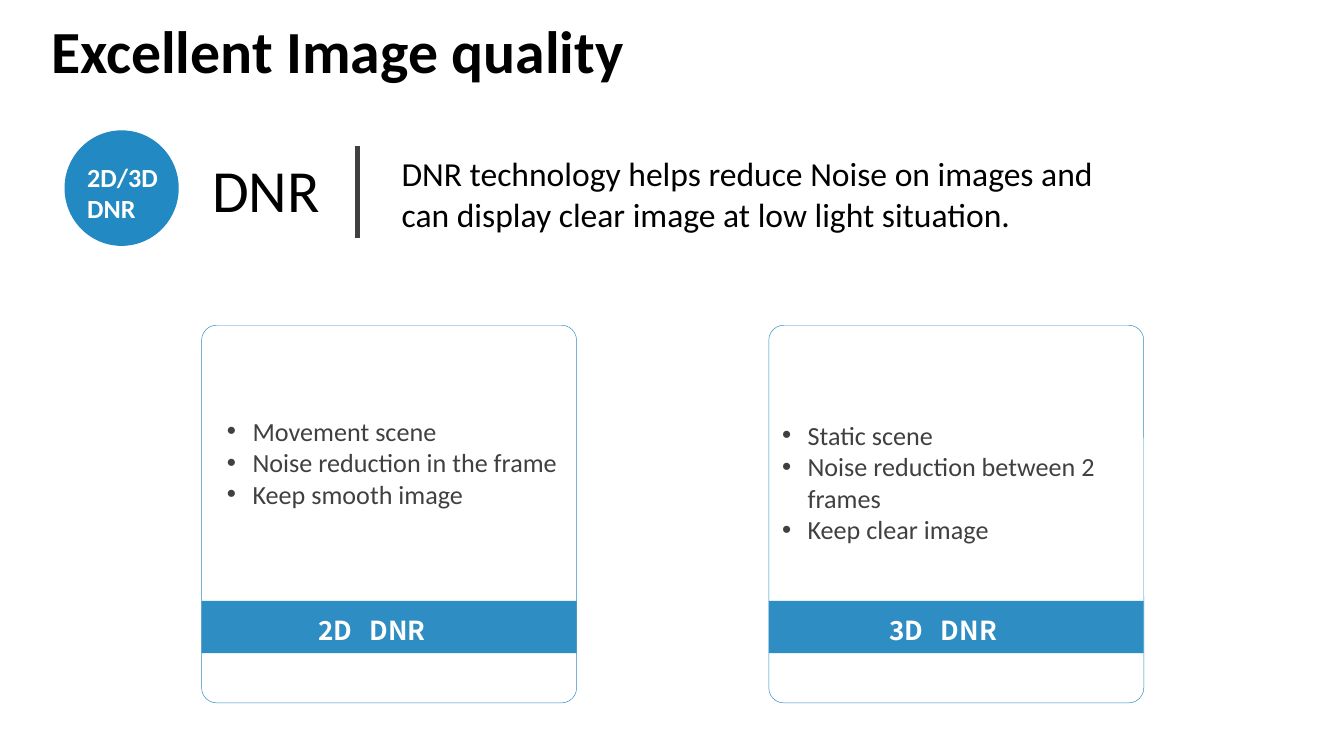
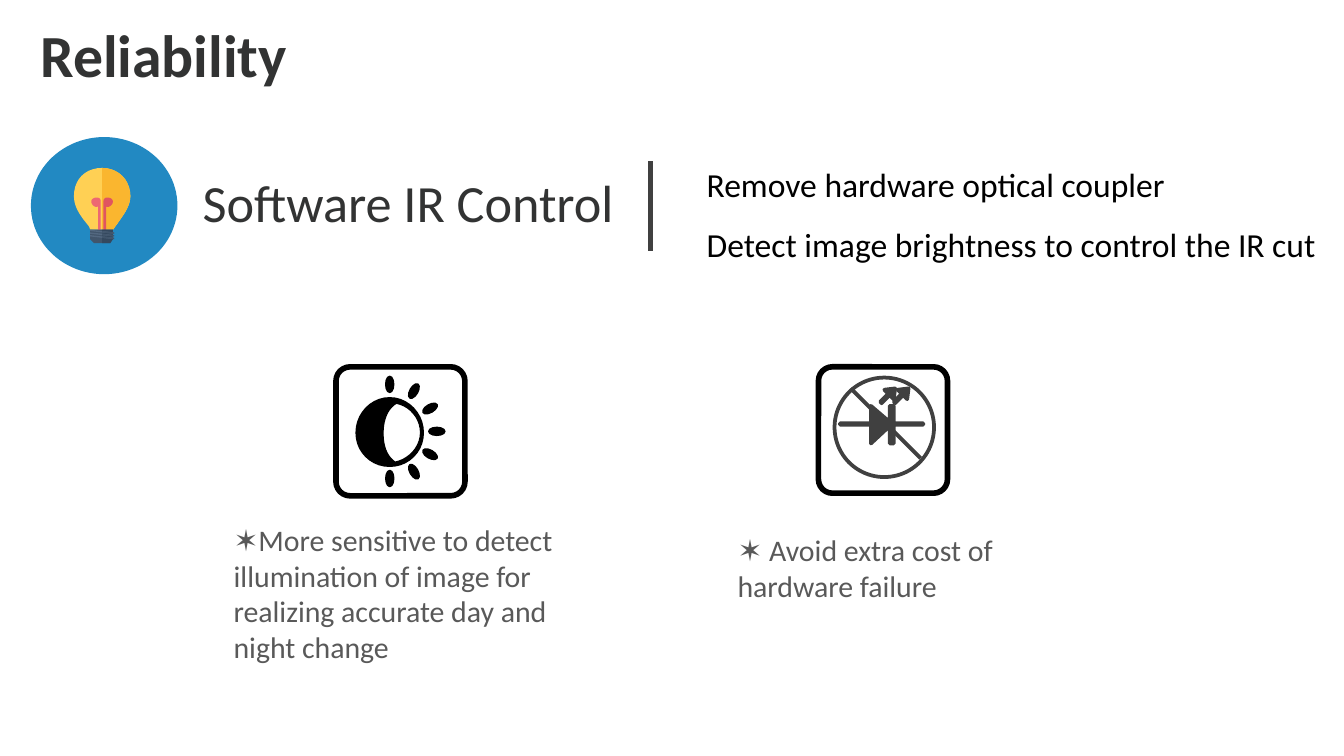
"""Build two slides on image quality and reliability."""
import math
from dataclasses import dataclass

from lxml import etree
from pptx import Presentation, slide as s, util as u
from pptx.dml.color import RGBColor
from pptx.enum import shapes, text as t
from pptx.oxml import ns
from pptx.shapes import autoshape as a
from pptx.text import text as tx

SCALE = 9144
BLACK = RGBColor(0x00, 0x00, 0x00)
WHITE = RGBColor(0xFF, 0xFF, 0xFF)
CHARCOAL = RGBColor(0x32, 0x33, 0x33)
DARK_GREY = RGBColor(0x40, 0x40, 0x40)
GREY = RGBColor(0x59, 0x59, 0x59)
BADGE_BLUE = RGBColor(0x22, 0x89, 0xC2)
CARD_BLUE = RGBColor(0x2E, 0x8D, 0xC2)
GLASS = RGBColor(0xFF, 0xD0, 0x54)
GLASS_SHADE = RGBColor(0xFA, 0xB6, 0x2F)
FILAMENT = RGBColor(0xED, 0x68, 0x72)
FILAMENT_SHADE = RGBColor(0xE0, 0x55, 0x60)
CAP = RGBColor(0x41, 0x55, 0x6B)
CAP_SHADE = RGBColor(0x34, 0x48, 0x5E)
THREAD = RGBColor(0x53, 0x68, 0x80)
MAIN_FONT = "Calibri"
LABEL_FONT = "Noto Sans CJK SC"

Contour = list[tuple[float, ...]]


@dataclass(frozen=True)
class Box:
    left: int
    top: int
    width: int
    height: int

    def emu(self) -> tuple[u.Emu, ...]:
        return tuple(px(n) for n in (self.left, self.top, self.width, self.height))


@dataclass(frozen=True)
class Style:
    size: int
    color: RGBColor
    bold: bool = False
    font: str = MAIN_FONT


@dataclass(frozen=True)
class TextItem:
    box: Box
    lines: tuple[str, ...]
    style: Style
    spacing: float = 1.0


@dataclass(frozen=True)
class Card:
    left: int
    label: str
    label_box: Box
    list_box: Box
    points: tuple[str, ...]
    alignment: t.PP_ALIGN


CARDS = (
    Card(150, "2D DNR", Box(227, 452, 125, 26), Box(159, 304, 271, 77),
         ("Movement scene", "Noise reduction in the frame", "Keep smooth image"),
         t.PP_ALIGN.JUSTIFY),
    Card(572, "3D DNR", Box(652, 452, 108, 32), Box(572, 307, 272, 105),
         ("Static scene", "Noise reduction between 2 frames", "Keep clear image"),
         t.PP_ALIGN.LEFT),
)
LABEL_STYLE = Style(14, WHITE, True, LABEL_FONT)
LIST_STYLE = Style(14, DARK_GREY)
NOTE_STYLE = Style(16, GREY)
BODY_STYLE = Style(18, BLACK)

QUALITY_TEXTS = (
    TextItem(Box(148, 109, 164, 64), ("DNR",), Style(32, BLACK)),
    TextItem(Box(289, 109, 547, 71),
             ("DNR technology helps reduce Noise on images and can display "
              "clear image at low light situation.",), BODY_STYLE),
    TextItem(Box(55, 115, 86, 57), ("2D/3D", "DNR"), Style(14, WHITE, True)),
)
RELIABILITY_TEXTS = (
    TextItem(Box(141, 122, 362, 57), ("Software IR Control",), Style(28, CHARCOAL)),
    TextItem(Box(516, 102, 484, 101),
             ("Remove hardware optical coupler",
              "Detect image brightness to control the IR cut"), BODY_STYLE, 1.5),
    TextItem(Box(164, 383, 273, 118),
             ("✶More sensitive to detect illumination of image for realizing "
              "accurate day and night change",), NOTE_STYLE),
    TextItem(Box(539, 391, 234, 64),
             ("✶ Avoid extra cost of hardware failure",), NOTE_STYLE),
)


def px(length: float) -> u.Emu:
    return u.Emu(round(length * SCALE))


def format_run(run: tx._Run, style: Style) -> None:
    font = run.font
    font.name, font.size, font.bold = style.font, u.Pt(style.size), style.bold
    font.color.rgb = style.color


def add_title(slide: s.Slide, title: str, box: Box, color: RGBColor) -> None:
    shape = slide.shapes.title
    shape.left, shape.top, shape.width, shape.height = box.emu()
    frame = shape.text_frame
    frame.text = title
    frame.vertical_anchor = t.MSO_ANCHOR.TOP
    frame.auto_size = t.MSO_AUTO_SIZE.NONE
    frame.paragraphs[0].alignment = t.PP_ALIGN.LEFT
    format_run(frame.paragraphs[0].runs[0], Style(32, color, True))


def add_text(slide: s.Slide, item: TextItem) -> tx.TextFrame:
    frame = slide.shapes.add_textbox(*item.box.emu()).text_frame
    frame.word_wrap = True
    frame.text = "\n".join(item.lines)
    for paragraph in frame.paragraphs:
        paragraph.line_spacing = item.spacing
        for run in paragraph.runs:
            format_run(run, item.style)
    return frame


def add_bullet(paragraph: tx._Paragraph) -> None:
    properties = paragraph._p.get_or_add_pPr()
    properties.set("marL", str(px(19)))
    properties.set("indent", str(px(-19)))
    etree.SubElement(properties, ns.qn("a:buFont"), typeface="Arial")
    etree.SubElement(properties, ns.qn("a:buChar"), char="•")


def paint(shape: a.Shape, fill: RGBColor | None = None,
          line: RGBColor | None = None, weight: float = 0) -> None:
    shape.shadow.inherit = False
    if fill is None:
        shape.fill.background()
    else:
        shape.fill.solid()
        shape.fill.fore_color.rgb = fill
    if line is None:
        shape.line.fill.background()
    else:
        shape.line.color.rgb = line
        shape.line.width = u.Pt(weight)


def add_shape(slide: s.Slide, kind: shapes.MSO_SHAPE, box: Box,
              fill: RGBColor | None = None, line: RGBColor | None = None,
              weight: float = 0, corner: float | None = None) -> a.Shape:
    shape = slide.shapes.add_shape(kind, *box.emu())
    if corner is not None:
        shape.adjustments[0] = corner
    paint(shape, fill, line, weight)
    return shape


def add_line(slide: s.Slide, start: tuple[int, int], end: tuple[int, int],
             weight: float) -> None:
    connector = slide.shapes.add_connector(
        shapes.MSO_CONNECTOR.STRAIGHT, *map(px, start + end))
    connector.line.color.rgb = DARK_GREY
    connector.line.width = u.Pt(weight)
    etree.SubElement(connector._element.spPr, ns.qn("a:effectLst"))


def flatten_curves(contour: Contour, steps: int = 10) -> list[tuple[u.Emu, u.Emu]]:
    points = [contour[0]]
    for segment in contour[1:]:
        if len(segment) == 2:
            points.append(segment)
            continue
        controls = (points[-1], segment[:2], segment[2:4], segment[4:])
        for step in range(1, steps + 1):
            f = step / steps
            weights = ((1 - f) ** 3, 3 * f * (1 - f) ** 2, 3 * f * f * (1 - f), f ** 3)
            points.append(tuple(sum(w * c[axis] for w, c in zip(weights, controls))
                                for axis in (0, 1)))
    return [(px(x), px(y)) for x, y in points]


def add_outline(slide: s.Slide, contours: list[Contour], fill: RGBColor,
                line: RGBColor | None = None, weight: float = 0) -> None:
    first, *others = [flatten_curves(contour) for contour in contours]
    builder = slide.shapes.build_freeform(*first[0], scale=1.0)
    builder.add_line_segments(first[1:], close=True)
    for points in others:
        builder.move_to(*points[0])
        builder.add_line_segments(points[1:], close=True)
    paint(builder.convert_to_shape(), fill, line, weight)


def add_card(slide: s.Slide, card: Card) -> None:
    add_shape(slide, shapes.MSO_SHAPE.ROUNDED_RECTANGLE, Box(card.left, 242, 279, 281),
              line=CARD_BLUE, weight=0.25, corner=0.04)
    add_shape(slide, shapes.MSO_SHAPE.RECTANGLE, Box(card.left, 447, 279, 39), CARD_BLUE)
    frame = add_text(slide, TextItem(card.list_box, card.points, LIST_STYLE))
    for paragraph in frame.paragraphs:
        add_bullet(paragraph)
        paragraph.alignment = card.alignment
    label = add_text(slide, TextItem(card.label_box, (), LABEL_STYLE))
    for part in card.label.partition(" "):
        run = label.paragraphs[0].add_run()
        run.text = part
        format_run(run, LABEL_STYLE)
        if part == " ":
            run._r.get_or_add_rPr().set("spc", "600")


def add_bulb(slide: s.Slide) -> None:
    right_glass = [(76, 125), (88, 125, 97, 134, 97, 146), (97, 154, 91, 161, 87, 167),
                   (86, 168, 85, 170, 84, 171)]
    left_glass = [(67, 171), (67, 170, 66, 168, 65, 167), (60, 161, 55, 154, 55, 146),
                  (55, 134, 63, 125, 76, 125)]
    filament = [(77, 150), (77, 148, 78, 147, 80, 147), (82, 147, 84, 148, 84, 150),
                (84, 152, 82, 154, 80, 154), (80, 154, 79, 154, 79, 153),
                (79, 172), (77, 172)]
    mirrored = [tuple(n if i % 2 else 152 - n for i, n in enumerate(segment))
                for segment in filament]
    cap_right = [(84, 171), (84, 178), (82, 181)]
    add_outline(slide, [right_glass + left_glass], GLASS)
    add_outline(slide, [right_glass + [(76, 171)]], GLASS_SHADE)
    add_outline(slide, [filament], FILAMENT_SHADE)
    add_outline(slide, [mirrored], FILAMENT)
    add_outline(slide, [[(67, 171), *cap_right, (70, 181), (67, 178)]], CAP)
    add_outline(slide, [[(76, 171), *cap_right, (76, 181)]], CAP_SHADE)
    for left, top, color in ((67, 171, THREAD), (76, 172, CAP)):
        add_outline(slide, [[(left, top + drop), (85, 173 + drop), (85, 174 + drop),
                             (left, top + 1 + drop)] for drop in (0, 2, 4)], color)


def add_sun(slide: s.Slide) -> None:
    disc = [(315, 322), (315, 308, 304, 296, 290, 296), (276, 296, 265, 308, 265, 322),
            (265, 336, 276, 347, 290, 347), (304, 347, 315, 336, 315, 322)]
    hole = [(295, 300), (305, 302, 313, 311, 313, 322), (313, 333, 304, 342, 294, 344),
            (287, 339, 285, 331, 285, 322), (285, 313, 288, 304, 295, 300)]
    add_outline(slide, [disc, hole], BLACK, BLACK, 0.75)
    for angle in range(-90, 91, 30):
        x = round(290 + 35 * math.cos(math.radians(angle)))
        y = round(321 + 35 * math.sin(math.radians(angle)))
        ray = add_shape(slide, shapes.MSO_SHAPE.OVAL, Box(x - 6, y - 3, 12, 6),
                        BLACK, BLACK, 0.75)
        ray.rotation = angle


def add_crossed_diode(slide: s.Slide) -> None:
    diode = [(648, 302), (662, 314), (662, 302), (665, 302), (665, 315), (687, 315),
             (687, 316), (665, 316), (665, 330), (662, 330), (662, 317), (648, 330),
             (648, 316), (625, 316), (625, 315), (648, 315)]
    arrow = [(676, 289), (675, 297), (672, 294), (666, 300), (665, 299), (671, 293),
             (668, 290)]
    arrows = [[(x - shift, y) for x, y in arrow] for shift in (0, 10)]
    add_line(slide, (633, 289), (685, 341), 2)
    add_outline(slide, [diode, *arrows], DARK_GREY, DARK_GREY, 2)
    add_shape(slide, shapes.MSO_SHAPE.OVAL, Box(621, 281, 74, 74),
              line=DARK_GREY, weight=2)


def build_quality(slide: s.Slide) -> None:
    add_title(slide, "Excellent Image quality", Box(28, 5, 519, 64), BLACK)
    for card in CARDS:
        add_card(slide, card)
    add_line(slide, (266, 109), (266, 177), 2.25)
    add_shape(slide, shapes.MSO_SHAPE.OVAL, Box(48, 97, 85, 86), BADGE_BLUE)
    for item in QUALITY_TEXTS:
        add_text(slide, item)


def build_reliability(slide: s.Slide) -> None:
    add_title(slide, "Reliability", Box(20, 8, 300, 64), CHARCOAL)
    add_shape(slide, shapes.MSO_SHAPE.OVAL, Box(23, 102, 109, 102), BADGE_BLUE)
    add_bulb(slide)
    add_line(slide, (484, 120), (484, 187), 2.25)
    for frame in (Box(250, 273, 96, 96), Box(609, 273, 96, 94)):
        add_shape(slide, shapes.MSO_SHAPE.ROUNDED_RECTANGLE, frame,
                  line=BLACK, weight=3, corner=0.11)
    add_sun(slide)
    add_crossed_diode(slide)
    for item in RELIABILITY_TEXTS:
        add_text(slide, item)


def main() -> None:
    presentation = Presentation()
    presentation.slide_width = px(1000)
    presentation.slide_height = u.Emu(presentation.slide_width * 9 // 16)
    for build in (build_quality, build_reliability):
        build(presentation.slides.add_slide(presentation.slide_layouts[5]))
    presentation.save("out.pptx")


if __name__ == "__main__":
    main()
